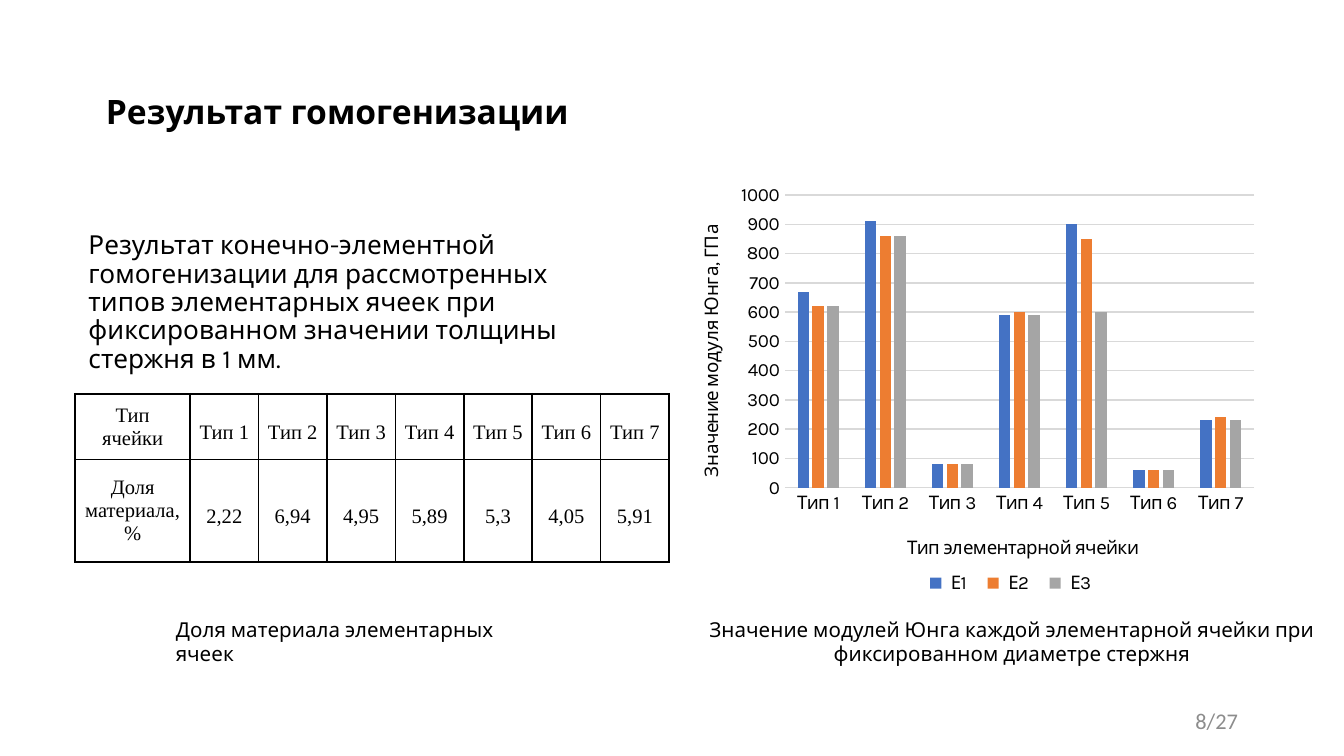
import pptx
import pptx.util
import pptx.chart.data
import pptx.dml.color
import pptx.enum.chart
import pptx.enum.text
import pptx.oxml
import pptx.oxml.ns

Pt = pptx.util.Pt
RGB = pptx.dml.color.RGBColor
ALIGN = pptx.enum.text.PP_ALIGN
ANCHOR = pptx.enum.text.MSO_ANCHOR
TICK = pptx.enum.chart.XL_TICK_MARK
qn = pptx.oxml.ns.qn

BLACK = RGB(0x00, 0x00, 0x00)
GRAY = RGB(0x8C, 0x8C, 0x8C)
RULE = RGB(0xD9, 0xD9, 0xD9)
BLUE = RGB(0x44, 0x72, 0xC4)
ORANGE = RGB(0xED, 0x7D, 0x31)
SILVER = RGB(0xA5, 0xA5, 0xA5)
MAIN = "Karla"

# The slide is a grid of 100 columns by 56.25 square rows
WIDE, HIGH = 100, 56.25
UNIT = pptx.util.Inches(0.1)

TYPES = [f"Тип {n}" for n in range(1, 8)]
SHARES = ["2,22", "6,94", "4,95", "5,89", "5,3", "4,05", "5,91"]
MODULI = [
    (" Е1", BLUE, (670, 910, 80, 590, 900, 60, 230)),
    (" Е2", ORANGE, (620, 860, 80, 600, 850, 60, 240)),
    (" Е3", SILVER, (620, 860, 80, 590, 600, 60, 230)),
]


def grid(*cells):
    return [round(cell * UNIT) for cell in cells]


def style(font, size, name=MAIN, color=BLACK, bold=False):
    font.size, font.name, font.bold = Pt(size), name, bold
    font.color.rgb = color


def add_text(slide, box, text, size, align=ALIGN.LEFT, anchor=ANCHOR.TOP,
             space=1.0, before=0, **look):
    frame = slide.shapes.add_textbox(*grid(*box)).text_frame
    frame.word_wrap = True
    frame.vertical_anchor = anchor
    para = frame.paragraphs[0]
    para.text = text
    para.alignment = align
    para.line_spacing = space
    para.space_before = Pt(before)
    style(para.font, size, **look)


def add_edges(cell):
    props = cell._tc.get_or_add_tcPr()
    for place, side in enumerate("LRTB"):
        props.insert(place, pptx.oxml.parse_xml(
            f'<a:ln{side} {pptx.oxml.ns.nsdecls("a")} w="12700"><a:solidFill>'
            f'<a:srgbClr val="{BLACK}"/></a:solidFill></a:ln{side}>'))


def fill_cell(cell, text, head):
    cell.fill.background()
    add_edges(cell)
    cell.vertical_anchor = ANCHOR.MIDDLE
    cell.margin_left = cell.margin_right = round(0.6 * UNIT)
    cell.margin_top = cell.margin_bottom = 0
    para = cell.text_frame.paragraphs[0]
    para.text = text
    para.alignment = ALIGN.CENTER
    para.space_after = Pt(8)
    if not head:
        para.line_spacing = 1.5
        para.space_before = Pt(24)
    style(para.font, 11, "Times New Roman")


def add_shares(slide, box):
    rows = [["Тип ячейки"] + TYPES, ["Доля материала, %"] + SHARES]
    table = slide.shapes.add_table(2, len(rows[0]), *grid(*box)).table
    table.first_row = table.horz_banding = False
    # The head column is wider; the rest share what is left
    first = 8.55
    rest = (box[2] - first) / len(TYPES)
    for place, column in enumerate(table.columns):
        column.width = round((rest if place else first) * UNIT)
    for row, tall in zip(table.rows, (4.9, 7.6)):
        row.height = round(tall * UNIT)
    for r, row in enumerate(rows):
        for c, text in enumerate(row):
            fill_cell(table.cell(r, c), text, c == 0)


def lay_out(node, place, inner=False, **sides):
    """Fix a chart part at shares of the chart's size."""
    old = node.find(qn("c:layout"))
    if old is not None:
        node.remove(old)
    target = '<c:layoutTarget val="inner"/>' if inner else ""
    modes = "".join(f'<c:{s}Mode val="edge"/>' for s in "xy")
    parts = "".join(f'<c:{s} val="{v}"/>' for s, v in sides.items())
    node.insert(place, pptx.oxml.parse_xml(
        f'<c:layout {pptx.oxml.ns.nsdecls("c")}><c:manualLayout>'
        f'{target}{modes}{parts}</c:manualLayout></c:layout>'))


def set_axis(axis, title, x, y):
    para = axis.axis_title.text_frame.paragraphs[0]
    para.text = title
    style(para.font, 10)
    lay_out(axis.axis_title._element, 1, x=x, y=y)
    axis.major_tick_mark = axis.minor_tick_mark = TICK.NONE
    style(axis.tick_labels.font, 10)


def add_moduli(slide, box):
    data = pptx.chart.data.CategoryChartData()
    data.categories = TYPES
    for name, _, values in MODULI:
        data.add_series(name, values)
    kind = pptx.enum.chart.XL_CHART_TYPE.COLUMN_CLUSTERED
    chart = slide.shapes.add_chart(kind, *grid(*box), data).chart
    style(chart.font, 10)
    chart.has_title = False

    # Bars
    plot = chart.plots[0]
    plot.gap_width, plot.overlap = 219, -27
    plot.vary_by_categories = False
    for series, (_, color, _) in zip(plot.series, MODULI):
        series.format.fill.solid()
        series.format.fill.fore_color.rgb = color
    lay_out(chart._chartSpace.chart.plotArea, 0, inner=True,
            x=0.19, y=0.04, w=0.79, h=0.66)

    # Axes
    cats, vals = chart.category_axis, chart.value_axis
    set_axis(cats, "Тип элементарной ячейки", 0.39, 0.8)
    set_axis(vals, "Значение модуля Юнга, ГПа", 0.04, 0.1)
    vals.minimum_scale, vals.maximum_scale, vals.major_unit = 0, 1000, 100
    vals.format.line.fill.background()
    for line in (cats.format.line, vals.major_gridlines.format.line):
        line.color.rgb = RULE
        line.width = Pt(0.75)

    # Legend
    chart.has_legend = True
    legend = chart.legend
    legend.position = pptx.enum.chart.XL_LEGEND_POSITION.BOTTOM
    legend.include_in_layout = False
    style(legend.font, 10)
    lay_out(legend._element, 1, x=0.41, y=0.88, w=0.32, h=0.07)


def add_left(slide, x, y):
    add_text(slide, (x, y, 40.5, 10.2),
             "Результат конечно-элементной гомогенизации для рассмотренных "
             "типов элементарных ячеек при фиксированном значении толщины "
             "стержня в 1 мм.", 14, space=0.9, before=7.5)
    add_shares(slide, (x, y + 12.5, 44.2, 12.5))
    add_text(slide, (x + 6.5, y + 28.6, 28.5, 2.9),
             "Доля материала элементарных ячеек", 11)


def add_right(slide, x, y):
    add_moduli(slide, (x, y, 44.2, 33))
    add_text(slide, (x + 1.6, y + 32.2, 47.4, 4.7),
             "Значение модулей Юнга каждой элементарной ячейки при "
             "фиксированном диаметре стержня", 11, align=ALIGN.CENTER)


def main():
    deck = pptx.Presentation()
    deck.slide_width, deck.slide_height = grid(WIDE, HIGH)
    slide = deck.slides.add_slide(deck.slide_layouts[6])
    add_text(slide, (6.9, 3, 86.2, 10.9), "Результат гомогенизации", 18,
             anchor=ANCHOR.MIDDLE, space=0.9, bold=True)
    add_left(slide, 5.6, 16.8)
    add_right(slide, 50, 13.2)
    # Page number
    add_text(slide, (70.6, 52.1, 22.5, 3), "8/27", 12, align=ALIGN.RIGHT,
             anchor=ANCHOR.MIDDLE, name="Calibri", color=GRAY)
    deck.save("out.pptx")


if __name__ == "__main__":
    main()
